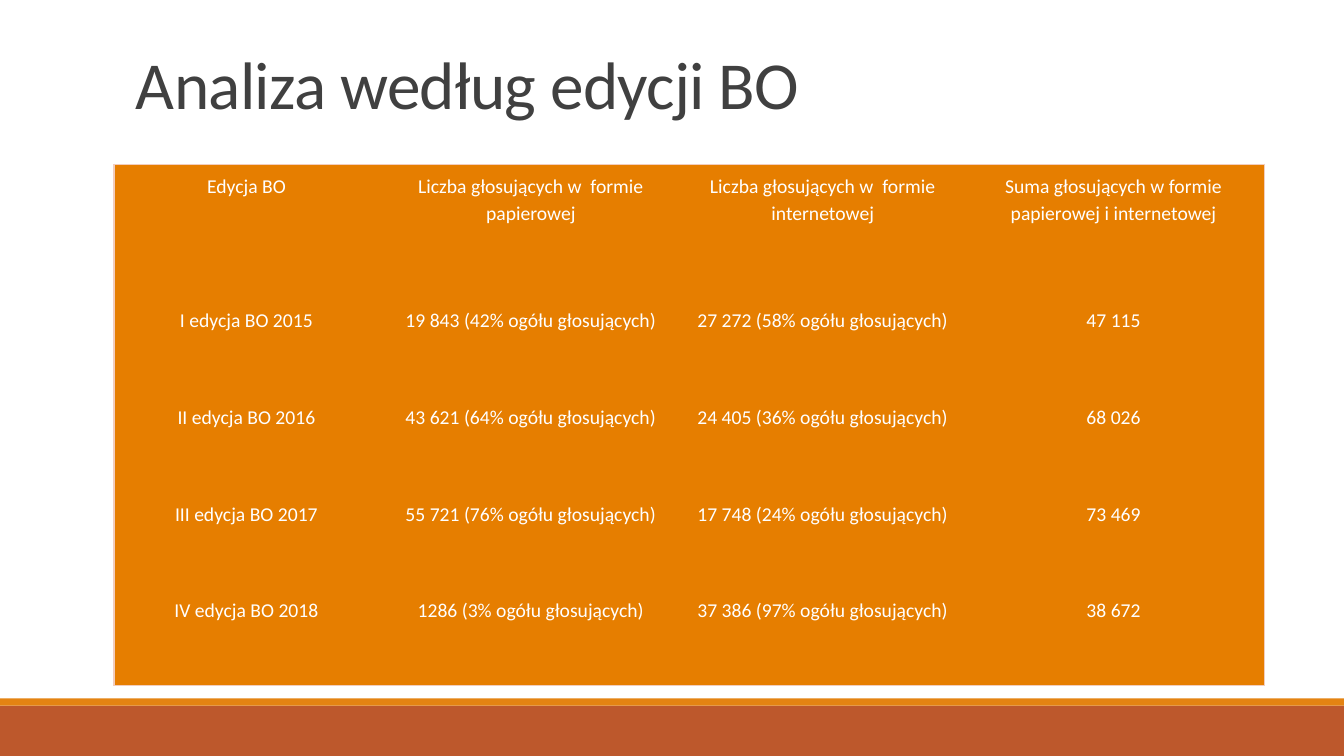
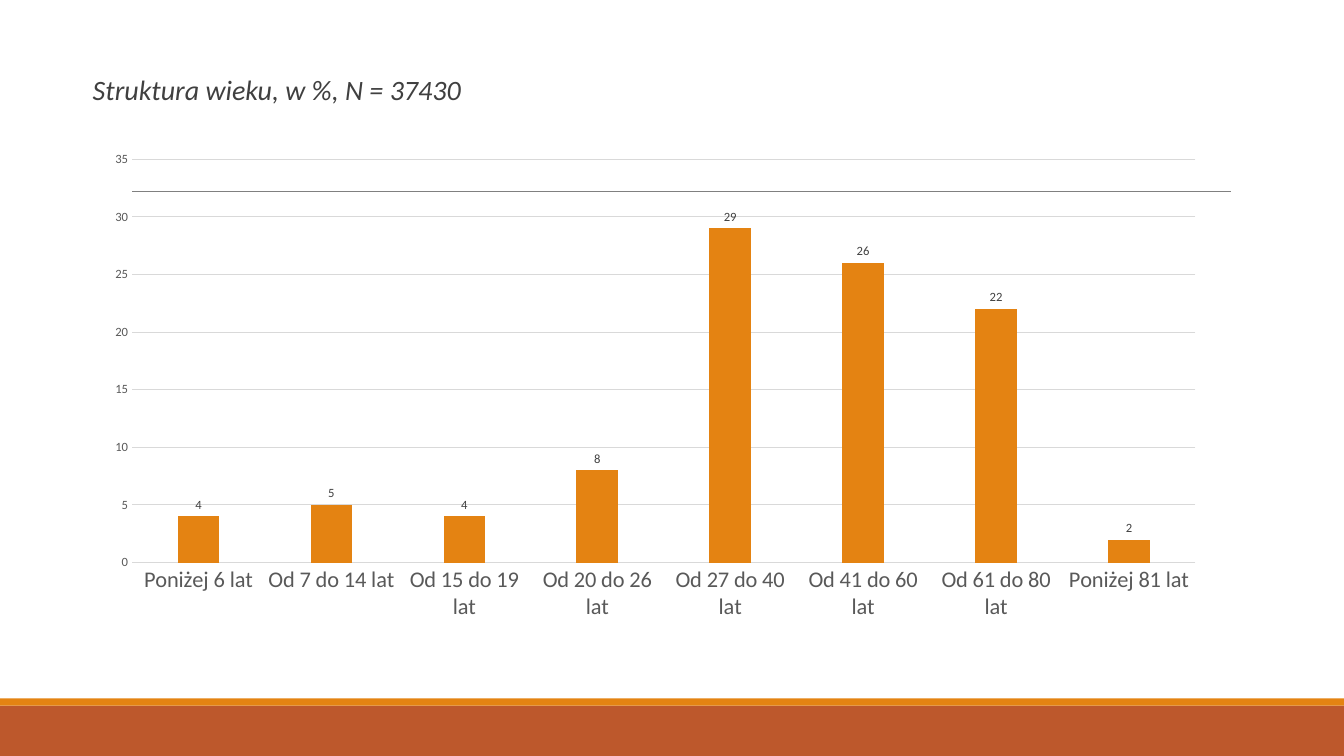
"""Builds two slides on participatory budget voting: a table by edition and an age chart."""
from lxml.etree import SubElement
from pptx import Presentation
from pptx.chart.data import CategoryChartData
from pptx.dml.color import RGBColor
from pptx.enum.chart import XL_CHART_TYPE as ChartType, XL_LABEL_POSITION as LabelPos, XL_TICK_MARK as Tick
from pptx.enum.shapes import MSO_CONNECTOR as Connector, MSO_SHAPE as Shape
from pptx.enum.text import MSO_ANCHOR as Anchor, PP_ALIGN as Align
from pptx.oxml.ns import qn
from pptx.util import Inches, Pt

W, H = 13.33, 7.5
FONT = "Calibri"
COLORS = {
    "band": "BD582C", "accent": "E48312", "rule": "808080", "text": "404040",
    "table": "E67E00", "border": "F2CDBD", "white": "FFFFFF",
    "axis": "595959", "grid": "D9D9D9",
}
BANDS = [(7, 0.5, "band"), (6.93, 0.07, "accent")]

TITLE = "Analiza według edycji BO"
COLUMNS = [2.63, 3.01, 2.78, 2.99]
HEADER_HEIGHT, ROW_HEIGHT = 1.33, 0.96
TABLE = [
    ("Edycja BO", "Liczba głosujących w  formie papierowej",
     "Liczba głosujących w  formie internetowej",
     "Suma głosujących w formie papierowej i internetowej"),
    ("I edycja BO 2015", "19 843 (42% ogółu głosujących)", "27 272 (58% ogółu głosujących)", "47 115"),
    ("II edycja BO 2016", "43 621 (64% ogółu głosujących)", "24 405 (36% ogółu głosujących)", "68 026"),
    ("III edycja BO 2017", "55 721 (76% ogółu głosujących)", "17 748 (24% ogółu głosujących)", "73 469"),
    ("IV edycja BO 2018", "1286 (3% ogółu głosujących)", "37 386 (97% ogółu głosujących)", "38 672"),
]

SUBTITLE = "Struktura wieku, w %, N = 37430"
AGES = {
    "Poniżej 6 lat": 4, "Od 7 do 14 lat": 5, "Od 15 do 19 lat": 4, "Od 20 do 26 lat": 8,
    "Od 27 do 40 lat": 29, "Od 41 do 60 lat": 26, "Od 61 do 80 lat": 22, "Poniżej 81 lat": 2,
}


def rgb(name):
    return RGBColor.from_string(COLORS[name])


def box(*lengths):
    return [Inches(v) for v in lengths]


def style_font(font, size, color):
    font.name, font.size = FONT, Pt(size)
    font.color.rgb = rgb(color)


def style_line(line, color, width):
    line.color.rgb = rgb(color)
    line.width = Pt(width)


def add_base(prs):
    slide = prs.slides.add_slide(prs.slide_layouts[6])
    for top, height, color in BANDS:
        sp = slide.shapes.add_shape(Shape.RECTANGLE, *box(0, top, W, height))
        sp.shadow.inherit = False
        sp.fill.solid()
        sp.fill.fore_color.rgb = rgb(color)
        sp.line.fill.background()
    rule = slide.shapes.add_connector(Connector.STRAIGHT, *box(1.31, 1.9, 12.21, 1.9))
    style_line(rule.line, "rule", 0.5)
    SubElement(rule._element.spPr, qn("a:effectLst"))
    return slide


def add_text(slide, area, text, size, spacing):
    tf = slide.shapes.add_textbox(*box(*area)).text_frame
    tf.word_wrap = True
    p = tf.paragraphs[0]
    p.text, p.line_spacing = text, spacing
    style_font(p.runs[0].font, size, "text")
    return tf


def set_borders(cell, outer):
    tc_pr = cell._tc.get_or_add_tcPr()
    for side, visible in zip("LRTB", outer):
        ln = SubElement(tc_pr, qn(f"a:ln{side}"), w=str(Pt(1)))
        if visible:
            fill = SubElement(ln, qn("a:solidFill"))
            SubElement(fill, qn("a:srgbClr"), val=COLORS["border"])
        else:
            SubElement(ln, qn("a:noFill"))


def add_editions_table(slide):
    last_row, last_col = len(TABLE) - 1, len(COLUMNS) - 1
    heights = [HEADER_HEIGHT] + [ROW_HEIGHT] * last_row
    area = box(1.13, 1.63, sum(COLUMNS), sum(heights))
    table = slide.shapes.add_table(len(TABLE), len(COLUMNS), *area).table
    for column, width in zip(table.columns, COLUMNS):
        column.width = Inches(width)
    for row, height in zip(table.rows, heights):
        row.height = Inches(height)
    for i, texts in enumerate(TABLE):
        for j, text in enumerate(texts):
            cell = table.cell(i, j)
            set_borders(cell, (j == 0, j == last_col, i == 0, i == last_row))
            cell.fill.solid()
            cell.fill.fore_color.rgb = rgb("table")
            cell.margin_left = cell.margin_right = Inches(0.07)
            cell.margin_top = cell.margin_bottom = Inches(0.07)
            p = cell.text_frame.paragraphs[0]
            p.text, p.alignment, p.line_spacing = text, Align.CENTER, 1.15
            style_font(p.runs[0].font, 14, "white")
            p.runs[0].font.bold = False


def add_age_chart(slide):
    data = CategoryChartData(number_format="0")
    data.categories = list(AGES)
    data.add_series("Series 1", list(AGES.values()))
    area = box(0.92, 1.41, 11.16, 4.85)
    chart = slide.shapes.add_chart(ChartType.COLUMN_CLUSTERED, *area, data).chart
    chart.has_legend = chart.has_title = False
    chart.font.name, chart.font.size = FONT, Pt(10)

    ages, percent = chart.category_axis, chart.value_axis
    for axis, size in ((ages, 16), (percent, 9)):
        axis.major_tick_mark = axis.minor_tick_mark = Tick.NONE
        style_font(axis.tick_labels.font, size, "axis")
    style_line(ages.format.line, "grid", 0.75)
    percent.format.line.fill.background()
    style_line(percent.major_gridlines.format.line, "grid", 0.75)
    percent.minimum_scale, percent.maximum_scale, percent.major_unit = 0, 35, 5
    percent.tick_labels.number_format = "0"
    percent.tick_labels.number_format_is_linked = False

    plot = chart.plots[0]
    plot.gap_width, plot.overlap, plot.vary_by_categories = 219, -27, False
    fill = plot.series[0].format.fill
    fill.solid()
    fill.fore_color.rgb = rgb("accent")
    plot.has_data_labels = True
    labels = plot.data_labels
    labels.show_value, labels.position = True, LabelPos.OUTSIDE_END
    labels.number_format, labels.number_format_is_linked = "0", False
    style_font(labels.font, 9, "text")


def main():
    prs = Presentation()
    prs.slide_width, prs.slide_height = box(W, H)

    slide = add_base(prs)
    tf = add_text(slide, (1.25, 0.21, 11, 1.06), TITLE, 48, 0.85)
    tf.vertical_anchor = Anchor.BOTTOM
    tf.paragraphs[0].runs[0].font._element.set("spc", "-50")
    add_editions_table(slide)

    slide = add_base(prs)
    tf = add_text(slide, (0.92, 0.71, 11.5, 6.04), SUBTITLE, 20, 0.9)
    tf.margin_left = tf.margin_right = 0
    p = tf.paragraphs[0]
    p.space_before, p.space_after = Pt(12), Pt(2)
    p.runs[0].font.italic = True
    add_age_chart(slide)

    prs.save("out.pptx")


if __name__ == "__main__":
    main()
